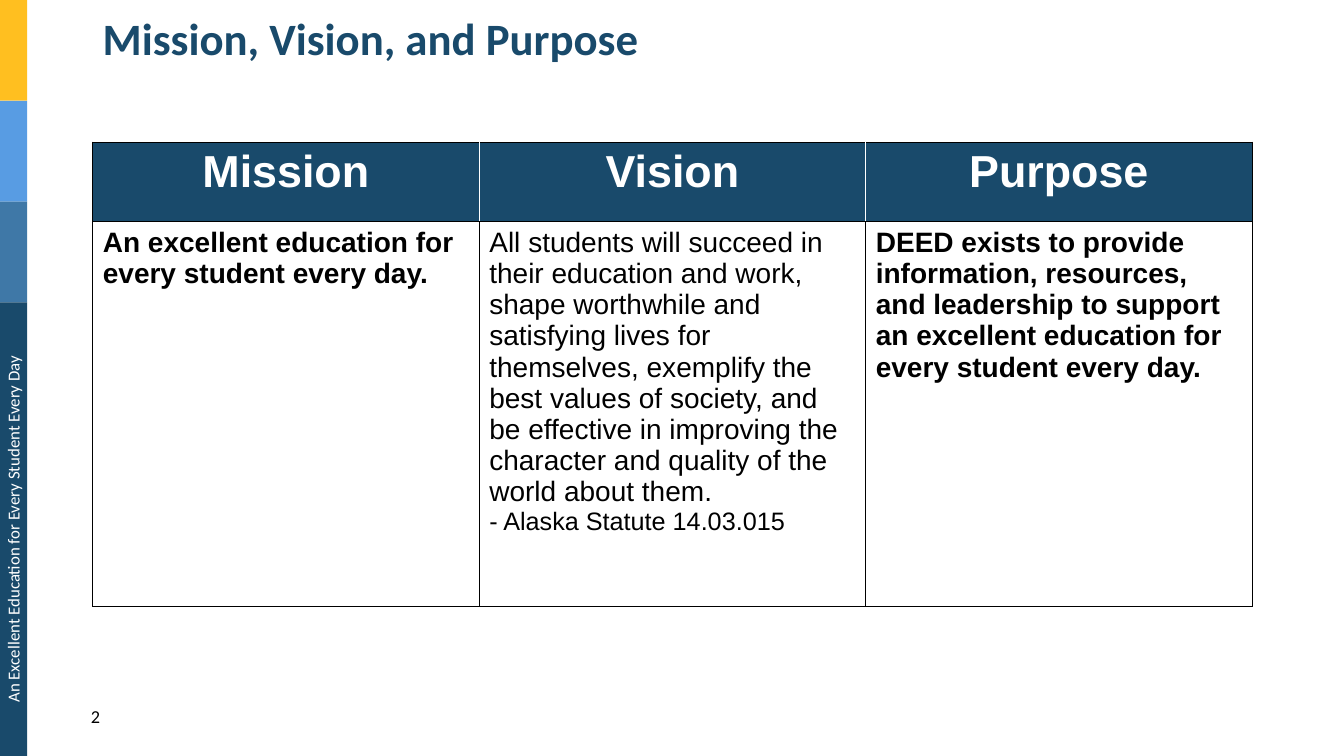
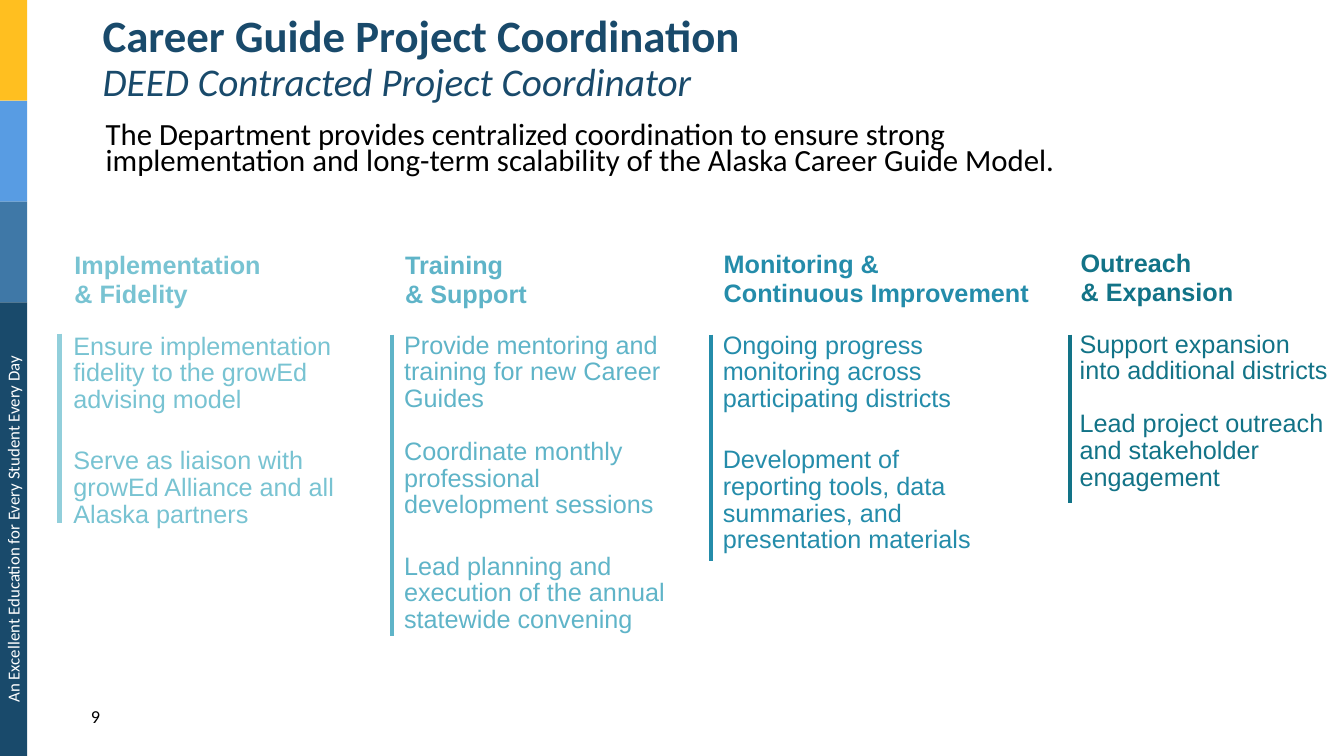
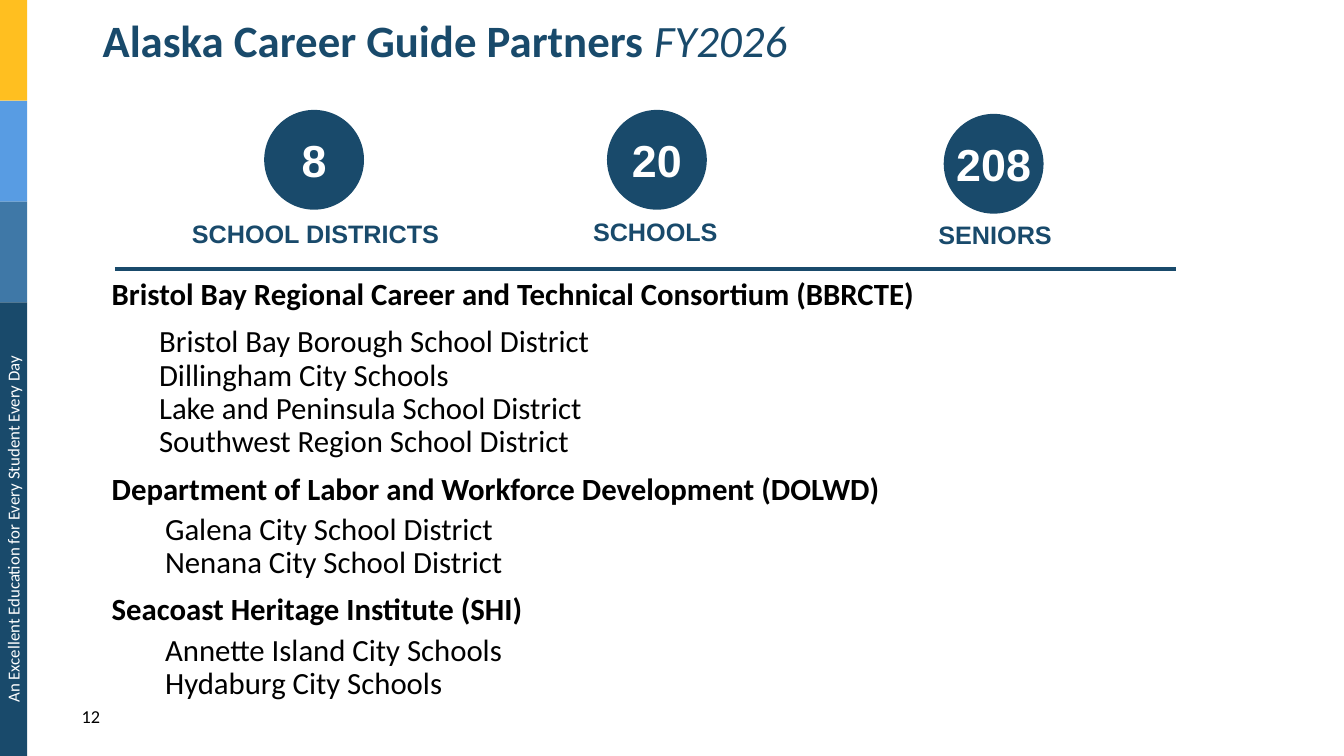
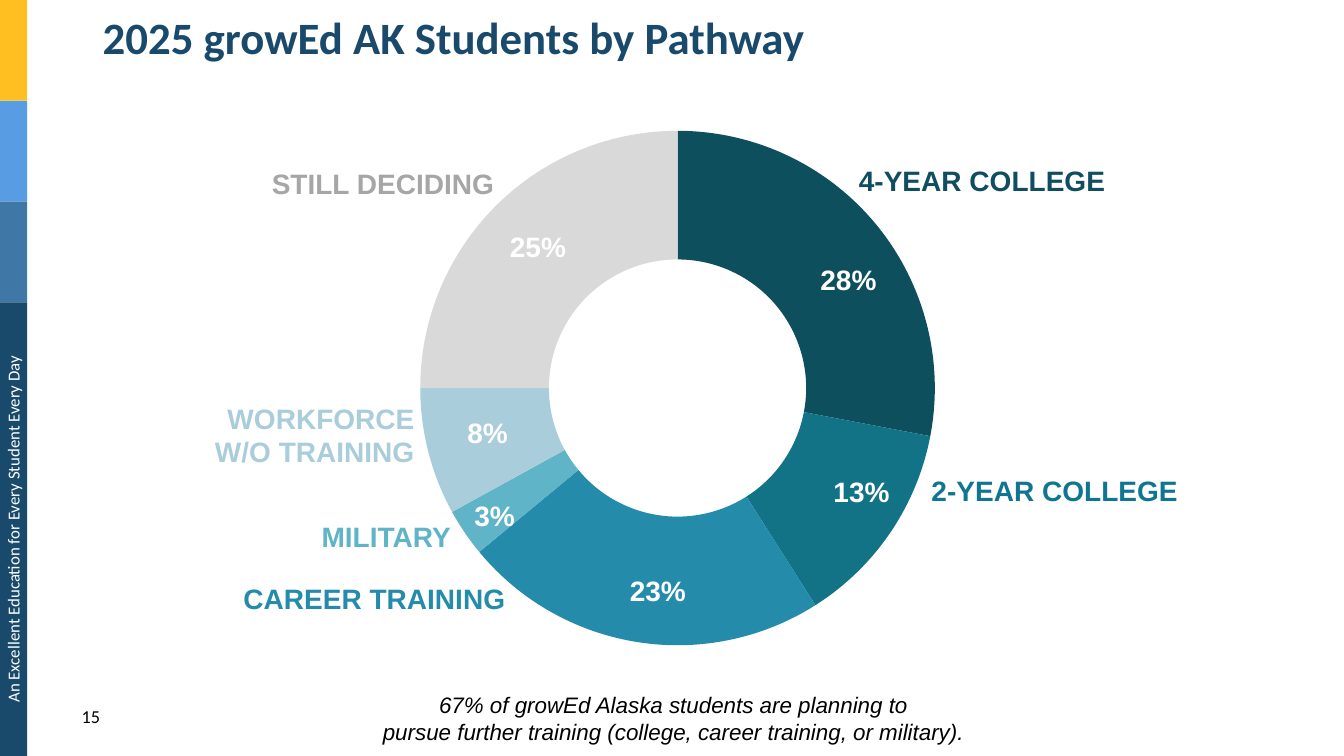
from lxml import etree
from pptx import Presentation
from pptx.chart.data import CategoryChartData
from pptx.dml.color import RGBColor
from pptx.enum.chart import XL_CHART_TYPE
from pptx.enum.shapes import MSO_CONNECTOR, MSO_SHAPE
from pptx.enum.text import MSO_ANCHOR, PP_ALIGN
from pptx.oxml.ns import qn
from pptx.util import Inches, Pt

LEFT, CENTER, RIGHT = PP_ALIGN.LEFT, PP_ALIGN.CENTER, PP_ALIGN.RIGHT
TOP, MIDDLE = MSO_ANCHOR.TOP, MSO_ANCHOR.MIDDLE
RECTANGLE, OVAL = MSO_SHAPE.RECTANGLE, MSO_SHAPE.OVAL
STRAIGHT = MSO_CONNECTOR.STRAIGHT
DOUGHNUT = XL_CHART_TYPE.DOUGHNUT

NAVY = RGBColor(0x19, 0x4A, 0x6B)
STEEL = RGBColor(0x3F, 0x78, 0xA7)
SKY = RGBColor(0x58, 0x9C, 0xE3)
GOLD = RGBColor(0xFF, 0xBF, 0x20)
WHITE = RGBColor(0xFF, 0xFF, 0xFF)
BLACK = RGBColor(0, 0, 0)
AQUA = RGBColor(0x78, 0xC3, 0xD2)
PALE_AQUA = RGBColor(0x92, 0xCF, 0xDB)
LAGOON = RGBColor(0x5F, 0xB4, 0xC8)
OCEAN = RGBColor(0x24, 0x8C, 0xAA)
TEAL = RGBColor(0x12, 0x73, 0x87)
DEEP_TEAL = RGBColor(0x0D, 0x4F, 0x5C)
DEEP_LABEL = RGBColor(0x0F, 0x4D, 0x60)
TEAL_LABEL = RGBColor(0x0F, 0x75, 0x90)
MIST = RGBColor(0xAA, 0xCD, 0xDC)
SILVER = RGBColor(0xD9, 0xD9, 0xD9)
GREY = RGBColor(0xA6, 0xA6, 0xA6)

HEAD_FONT, BODY_FONT = "Calibri", "Arial"
MOTTO = "An Excellent Education for Every Student Every Day"
BANDS = [(GOLD, 1), (SKY, 1), (STEEL, 1), (NAVY, 4.5)]
BAND_WIDTH = 0.27

STATEMENTS = [
    ("Mission", True, [("An excellent education for every student every day.", 20)]),
    ("Vision", False, [
        ("All students will succeed in their education and work, shape worthwhile and "
         "satisfying lives for themselves, exemplify the best values of society, and be "
         "effective in improving the character and quality of the world about them.", 20),
        ("- Alaska Statute 14.03.015", 18)]),
    ("Purpose", True, [
        ("DEED exists to provide information, resources, and leadership to support "
         "an excellent education for every student every day.", 20)]),
]

COORDINATION = ("The Department provides centralized coordination to ensure strong "
                "implementation and long-term scalability of the Alaska Career Guide Model.")
DUTIES = [
    (0.63, 3.26, 2.43, 0.59, 3.31, 5.19, AQUA, PALE_AQUA, "Implementation\n& Fidelity", [
        ("Ensure implementation fidelity to the growEd advising model", 0),
        ("Serve as liaison with growEd Alliance and all Alaska partners", 25)]),
    (3.91, 3.25, 2.43, 3.89, 3.32, 6.31, LAGOON, LAGOON, "Training\n& Support", [
        ("Provide mentoring and training for new Career Guides", 0),
        ("Coordinate monthly professional development sessions", 19),
        ("Lead planning and execution of the annual statewide convening", 25)]),
    (7.07, 3.25, 2.42, 7.05, 3.32, 5.57, OCEAN, OCEAN, "Monitoring &\nContinuous Improvement", [
        ("Ongoing progress monitoring across participating districts", 0),
        ("Development of reporting tools, data summaries, and presentation materials", 25)]),
    (10.61, 3.24, 2.41, 10.61, 3.32, 4.99, TEAL, TEAL, "Outreach\n& Expansion", [
        ("Support expansion\ninto additional districts", 0),
        ("Lead project outreach and stakeholder engagement", 19)]),
]

COUNTS = [
    ("8", "SCHOOL DISTRICTS", 2.62, 1.09, 2.12),
    ("20", "SCHOOLS", 6.02, 1.09, 2.1),
    ("208", "SENIORS", 9.36, 1.13, 2.13),
]
PARTNERS = [
    ("Bristol Bay Regional Career and Technical Consortium (BBRCTE)", 0.5, 10,
     "Bristol Bay Borough School District\nDillingham City Schools\n"
     "Lake and Peninsula School District\nSouthwest Region School District"),
    ("Department of Labor and Workforce Development (DOLWD)", 0.56, 5,
     "Galena City School District\nNenana City School District"),
    ("Seacoast Heritage Institute (SHI)", 0.56, 5,
     "Annette Island City Schools\nHydaburg City Schools"),
]

PATHWAYS = [
    (28, DEEP_TEAL, (7.92, 2.55), "4-YEAR COLLEGE", DEEP_LABEL, (8.42, 1.57, 2.86, 0.44), LEFT),
    (13, TEAL, (8.05, 4.65), "2-YEAR COLLEGE", TEAL_LABEL, (9.14, 4.65, 2.95, 0.44), LEFT),
    (23, OCEAN, (6.03, 5.64), "CAREER TRAINING", OCEAN, (2.03, 5.72, 3.08, 0.44), RIGHT),
    (3, LAGOON, (4.41, 4.89), "MILITARY", LAGOON, (2.35, 5.1, 2.22, 0.44), RIGHT),
    (8, MIST, (4.34, 4.07), "WORKFORCE W/O TRAINING", MIST, (1.58, 3.93, 2.63, 0.77), RIGHT),
    (25, SILVER, (4.84, 2.22), "STILL DECIDING", GREY, (2.56, 1.6, 2.44, 0.44), RIGHT),
]
FURTHER_TRAINING = ("67% of growEd Alaska students are planning to\n"
                    "pursue further training (college, career training, or military).")


def span(text, size, color, bold=False, italic=False, font=BODY_FONT):
    return text, size, color, bold, italic, font


def add_para(frame, spans, align=LEFT, spacing=None, before=0, indent=0):
    first = frame.paragraphs[0]
    para = frame.add_paragraph() if first.runs else first
    para.alignment = align
    if spacing:
        para.line_spacing = spacing
    if before:
        para.space_before = Pt(before)
    if indent:
        para._p.get_or_add_pPr().set("marL", str(Inches(indent)))
    for text, size, color, bold, italic, font in spans:
        for number, line in enumerate(text.split("\n")):
            if number:
                para.add_line_break()
            if line:
                run = para.add_run()
                run.text = line
                run.font.size = Pt(size)
                run.font.name = font
                run.font.bold = bold
                run.font.italic = italic
                run.font.color.rgb = color


def add_box(page, at, anchor=TOP):
    box = page.shapes.add_textbox(*map(Inches, at))
    box.text_frame.word_wrap = True
    box.text_frame.vertical_anchor = anchor
    return box


def add_label(page, at, spans, align=LEFT, anchor=TOP, spacing=None):
    box = add_box(page, at, anchor)
    add_para(box.text_frame, spans, align, spacing)
    return box


def add_solid(page, kind, at, color):
    shape = page.shapes.add_shape(kind, *map(Inches, at))
    shape.shadow.inherit = False
    shape.fill.solid()
    shape.fill.fore_color.rgb = color
    shape.line.fill.background()
    return shape


def add_rule(page, start, end, color):
    rule = page.shapes.add_connector(STRAIGHT, *map(Inches, start + end))
    rule.line.color.rgb = color
    rule.line.width = Pt(3)
    etree.SubElement(rule._element.spPr, qn("a:effectLst"))


def heading(text):
    return span(text, 32, NAVY, bold=True, font=HEAD_FONT)


def subheading(text, size):
    return span(text, size, NAVY, italic=True, font=HEAD_FONT)


def add_page(deck, number, title, top, height):
    page = deck.slides.add_slide(deck.slide_layouts[6])
    band_top = 0
    for color, band_height in BANDS:
        add_solid(page, RECTANGLE, (0, band_top, BAND_WIDTH, band_height), color)
        band_top += band_height
    motto = add_label(page, (-2.12, 5.1, 4.5, 0.3),
                      [span(MOTTO, 12, WHITE, font=HEAD_FONT)], CENTER)
    motto.rotation = 270
    add_label(page, (0.92, top, 11.5, height), title, anchor=MIDDLE, spacing=0.9)
    folio = add_label(page, (0.29, 6.9, 0.8, 0.57),
                      [span(str(number), 13, BLACK, font=HEAD_FONT)], RIGHT)
    folio.text_frame.margin_top = folio.text_frame.margin_bottom = Inches(0.1)
    return page


def style_cell(cell, fill, left, right):
    cell.fill.solid()
    cell.fill.fore_color.rgb = fill
    borders = [("a:lnL", left), ("a:lnR", right), ("a:lnT", BLACK), ("a:lnB", BLACK)]
    properties = cell._tc.get_or_add_tcPr()
    for position, (tag, color) in enumerate(borders):
        border = etree.Element(qn(tag), w=str(Pt(1)))
        paint = etree.SubElement(border, qn("a:solidFill"))
        etree.SubElement(paint, qn("a:srgbClr"), val=str(color))
        properties.insert(position, border)


def build_mission(deck):
    page = add_page(deck, 2, [heading("Mission, Vision, and Purpose")], 0.02, 0.77)
    frame = page.shapes.add_table(2, len(STATEMENTS), *map(Inches, (0.92, 1.41, 11.5, 4.61)))
    table = frame.table
    table.rows[0].height, table.rows[1].height = Inches(0.79), Inches(3.82)
    last = len(STATEMENTS) - 1
    for column, (name, bold, paras) in enumerate(STATEMENTS):
        top_cell, body_cell = table.cell(0, column), table.cell(1, column)
        add_para(top_cell.text_frame, [span(name, 32, WHITE, bold=True)], CENTER)
        for text, size in paras:
            add_para(body_cell.text_frame, [span(text, size, BLACK, bold)])
        style_cell(top_cell, NAVY, WHITE if column else BLACK,
                   WHITE if column < last else BLACK)
        style_cell(body_cell, WHITE, BLACK, BLACK)


def build_coordination(deck):
    title = [heading("Career Guide Project Coordination\n"),
             subheading("DEED Contracted Project Coordinator", 28)]
    page = add_page(deck, 9, title, 0.02, 1.14)
    intro = add_box(page, (0.92, 1.19, 10.43, 0.81))
    add_para(intro.text_frame, [span(COORDINATION, 22, BLACK, font=HEAD_FONT)],
             spacing=Pt(19), indent=0.03)
    for (left, top, name_top, rule_left, rule_top, rule_end,
         color, rule_color, name, duties) in DUTIES:
        add_label(page, (left + 0.01, name_top, 3.34, 0.69),
                  [span(name, 18, color, bold=True)], spacing=Pt(21))
        box = add_box(page, (left, top, 2.79, rule_end - top))
        for duty, before in duties:
            add_para(box.text_frame, [span(duty, 18, color)], spacing=Pt(19), before=before)
        add_rule(page, (rule_left, rule_top), (rule_left, rule_end), rule_color)


def build_partners(deck):
    title = [heading("Alaska Career Guide Partners "), subheading("FY2026", 32)]
    page = add_page(deck, 12, title, 0.03, 0.8)
    for column, (count, name, left, top, name_top) in enumerate(COUNTS):
        circle = add_solid(page, OVAL, (left, top, 0.99, 0.99), NAVY)
        frame = circle.text_frame
        frame.word_wrap = False
        frame.vertical_anchor = MIDDLE
        frame.margin_left = frame.margin_right = 0
        add_para(frame, [span(count, 32, WHITE, bold=True)], CENTER)
        add_label(page, (1.45 + 3.37 * column, name_top, 3.36, 0.4),
                  [span(name, 18, NAVY, bold=True)], CENTER)
    add_rule(page, (1.14, 2.67), (11.66, 2.67), NAVY)
    frame = add_box(page, (0.98, 2.72, 11.5, 4.55)).text_frame
    for row, (partner, indent, before, districts) in enumerate(PARTNERS):
        add_para(frame, [span(partner, 22, BLACK, bold=True, font=HEAD_FONT)],
                 spacing=0.9, before=10 if row else 0, indent=0.03)
        add_para(frame, [span(districts, 22, BLACK, font=HEAD_FONT)],
                 spacing=0.9, before=before, indent=indent)


def build_pathways(deck):
    page = add_page(deck, 15, [heading("2025 growEd AK Students by Pathway")], 0.03, 0.74)
    data = CategoryChartData()
    data.categories = [str(number + 1) for number in range(len(PATHWAYS))]
    data.add_series("Series 1", [pathway[0] for pathway in PATHWAYS])
    chart = page.shapes.add_chart(DOUGHNUT, *map(Inches, (2.87, 1.16, 7.7, 5.38)), data).chart
    chart.has_title = chart.has_legend = False
    chart.font.size = Pt(18)
    chart.font.name = BODY_FONT
    chart.font.color.rgb = BLACK
    plot = chart.plots[0]
    plot._element.find(qn("c:holeSize")).set("val", "56")
    for number, (share, color, spot, name, name_color, at, align) in enumerate(PATHWAYS):
        slice_format = plot.series[0].points[number].format
        slice_format.fill.solid()
        slice_format.fill.fore_color.rgb = color
        slice_format.line.fill.background()
        add_label(page, spot + (0.99, 0.44), [span(f"{share}%", 20, WHITE, bold=True)],
                  CENTER, MIDDLE)
        add_label(page, at, [span(name, 20, name_color, bold=True)], align)
    add_label(page, (1.93, 6.81, 9.5, 0.64),
              [span(FURTHER_TRAINING, 16, BLACK, italic=True)], CENTER)


def main():
    deck = Presentation()
    deck.slide_width, deck.slide_height = Inches(13.33), Inches(7.5)
    for build in (build_mission, build_coordination, build_partners, build_pathways):
        build(deck)
    deck.save("out.pptx")


if __name__ == "__main__":
    main()
